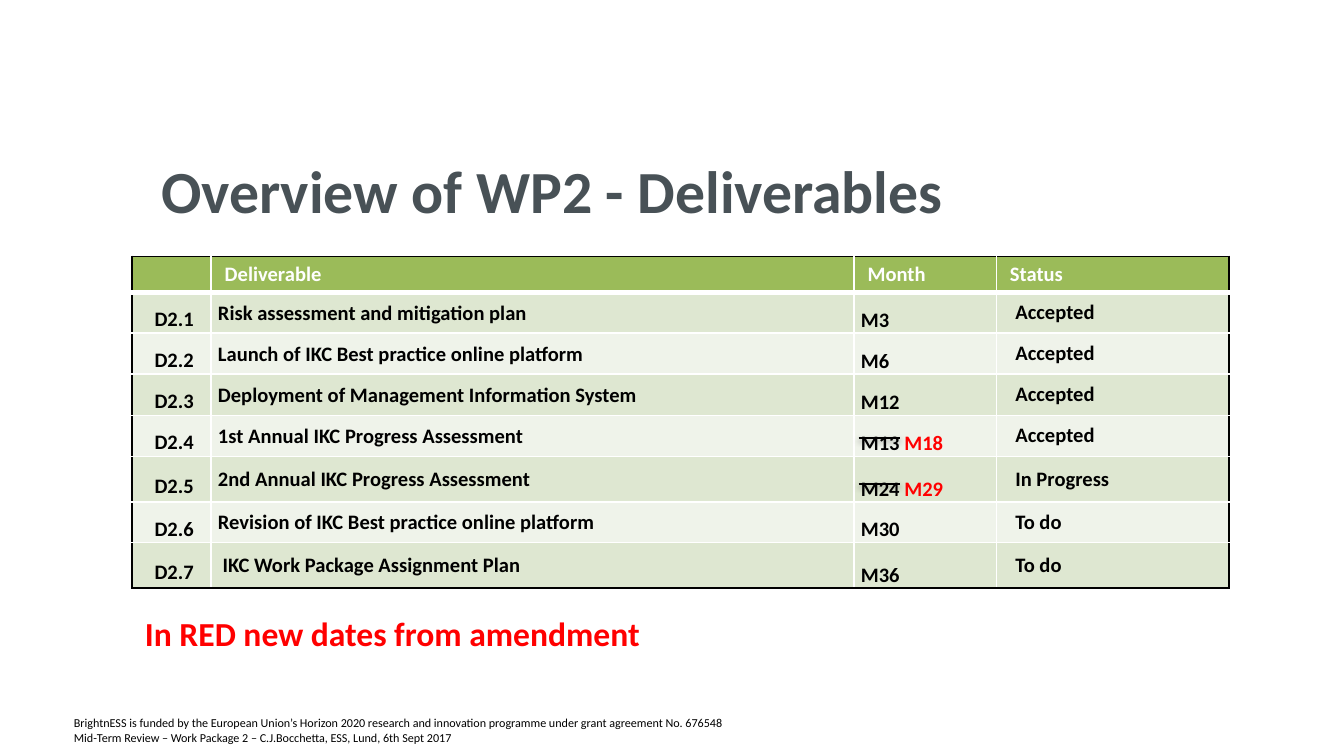
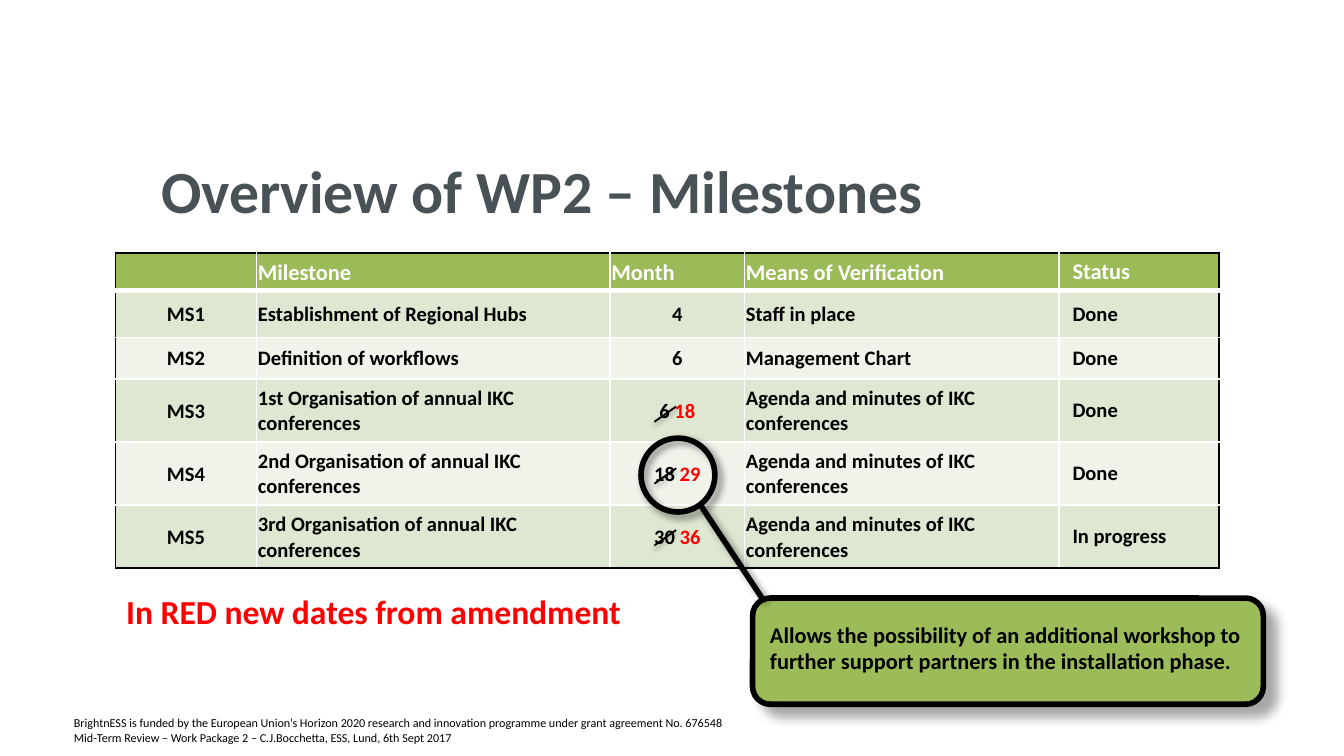
"""Build the WP2 deliverables and milestones overview slides."""
from dataclasses import dataclass
from typing import Any, NamedTuple, Optional, Sequence, Union

from lxml import etree
from pptx import Presentation, util as u
from pptx.dml.color import RGBColor
from pptx.enum import shapes, text
from pptx.oxml import ns

COLORS = {
    "ink": "000000", "white": "FFFFFF", "title": "485156", "new_date": "FF0000",
    "header": "9BBB59", "odd": "DEE7D1", "even": "EFF3EA", "callout": "9CBB59",
}
FONT = "Calibri"
FOOTER = [
    "BrightnESS is funded by the European Union’s Horizon 2020 research and innovation "
    "programme under grant agreement No. 676548",
    "Mid-Term Review – Work Package 2 – C.J.Bocchetta, ESS, Lund, 6th Sept 2017",
]
LEFT, CENTER = text.PP_ALIGN.LEFT, text.PP_ALIGN.CENTER
TOP, MIDDLE, BOTTOM = (text.MSO_ANCHOR.TOP, text.MSO_ANCHOR.MIDDLE, text.MSO_ANCHOR.BOTTOM)
TIGHT = (0.7, 0.7, 0.7, 0)
WIDE = (7.2, 2.8, 7.2, 2.8)
BOX = (7.2, 3.6, 7.2, 3.6)


class Revised(NamedTuple):
    """A date with the one that replaces it."""
    old: str
    new: str


class Shadow(NamedTuple):
    """An outer shadow: opacity in percent, lengths in points, angle in degrees."""
    opacity: float
    blur: float
    distance: float
    angle: float


class Box(NamedTuple):
    """A place on the slide in points."""
    left: float
    top: float
    width: float
    height: float


Line = Union[str, Revised]
STRIKE_SHADOW = Shadow(38, 3.1, 1.6, 90)
RING_SHADOW = Shadow(43, 4, 3, 45)
PANEL_SHADOW = Shadow(35, 6.2, 8, 41)


@dataclass(frozen=True)
class Column:
    """One table column with the format of its body cells."""
    header: str
    width: float
    align: Any = LEFT
    anchor: Any = MIDDLE
    margins: tuple = TIGHT
    header_margins: tuple = TIGHT
    spacing: Optional[float] = None
    indent: float = 0


@dataclass(frozen=True)
class Overview:
    """One slide: its title, table and note."""
    title: str
    left: float
    top: float
    header_size: float
    header_anchor: Any
    columns: Sequence[Column]
    heights: Sequence[float]
    rows: Sequence[Sequence[Line]]
    note: Box


DELIVERABLES = Overview(
    "Overview of WP2 - Deliverables", 70.6, 137.3, 11, TOP,
    [
        Column("", 42.6, align=CENTER, spacing=1.5, indent=2.9),
        Column("Deliverable", 344.4, header_margins=WIDE, indent=2.9),
        Column("Month", 76.3, anchor=BOTTOM, header_margins=WIDE, indent=2.9),
        Column("Status", 124.5, margins=WIDE, header_margins=WIDE, indent=2.9),
    ],
    [19.2, 22, 22, 22, 22, 24.5, 21.6, 24.5],
    [
        ("D2.1", "Risk assessment and mitigation plan", "M3", "Accepted"),
        ("D2.2", "Launch of IKC Best practice online platform", "M6", "Accepted"),
        ("D2.3", "Deployment of Management Information System", "M12", "Accepted"),
        ("D2.4", "1st Annual IKC Progress Assessment", Revised("M13", "M18"), "Accepted"),
        ("D2.5", "2nd Annual IKC Progress Assessment", Revised("M24", "M29"), "In Progress"),
        ("D2.6", "Revision of IKC Best practice online platform", "M30", "To do"),
        ("D2.7", " IKC Work Package Assignment Plan", "M36", "To do"),
    ],
    Box(70.6, 324.7, 283, 29),
)
AGENDA = "Agenda and minutes of IKC conferences"
MILESTONES = Overview(
    "Overview of WP2 – Milestones", 61.9, 135.5, 12, MIDDLE,
    [
        Column("", 75.6, align=CENTER),
        Column("Milestone", 189.4),
        Column("Month", 72, align=CENTER),
        Column("Means of Verification", 168.5),
        Column("Status", 85.7, margins=WIDE, header_margins=WIDE),
    ],
    [20.4, 25, 22.2, 33.8, 33.8, 33.8],
    [
        ("MS1", "Establishment of Regional Hubs", "4", "Staff in place", "Done"),
        ("MS2", "Definition of workflows", "6", "Management Chart", "Done"),
        ("MS3", "1st Organisation of annual IKC conferences", Revised("6", "18"), AGENDA, "Done"),
        ("MS4", "2nd Organisation of annual IKC conferences", Revised("18", "29"), AGENDA, "Done"),
        ("MS5", "3rd Organisation of annual IKC conferences", Revised("30", "36"), AGENDA,
         "In progress"),
    ],
    Box(60.5, 313.2, 283, 29),
)


def rgb(name: str) -> RGBColor:
    """Look up a palette colour."""
    return RGBColor.from_string(COLORS[name])


def child(parent: Any, tag: str, **attributes: Any) -> Any:
    """Append a DrawingML element."""
    return etree.SubElement(parent, ns.qn(f"a:{tag}"),
                            {key: str(value) for key, value in attributes.items()})


def write(frame: Any, lines: Sequence[Line], *, size: float, color: str = "ink",
          bold: bool = True, align: Any = LEFT, spacing: Any = None, indent: float = 0) -> None:
    """Fill a text frame with formatted paragraphs."""
    for index, line in enumerate(lines):
        paragraph = frame.paragraphs[0] if index == 0 else frame.add_paragraph()
        paragraph.alignment = align
        if spacing:
            paragraph.line_spacing = spacing
        if indent:
            properties = paragraph._p.get_or_add_pPr()
            properties.set("marL", str(u.Pt(indent)))
            properties.set("indent", "0")
        if not line:
            child(paragraph._p, "endParaRPr", sz=int(size * 100))
            continue
        parts = ([(line.old + " ", color), (line.new, "new_date")]
                 if isinstance(line, Revised) else [(line, color)])
        for wording, tint in parts:
            run = paragraph.add_run()
            run.text = wording
            run.font.name, run.font.size, run.font.bold = FONT, u.Pt(size), bold
            run.font.color.rgb = rgb(tint)


def add_text(parent: Any, box: Box, lines: Sequence[Line], *, anchor: Any = TOP,
             margins: tuple = BOX, wrap: bool = True, **style: Any) -> None:
    """Place a text box."""
    frame = parent.add_textbox(*map(u.Pt, box)).text_frame
    frame.word_wrap, frame.vertical_anchor = wrap, anchor
    (frame.margin_left, frame.margin_top,
     frame.margin_right, frame.margin_bottom) = map(u.Pt, margins)
    write(frame, lines, **style)


def outline(shape: Any, width: float, shadow: Shadow) -> None:
    """Give a shape or connector its black line and its shadow."""
    shape.line.color.rgb = rgb("ink")
    shape.line.width = u.Pt(width)
    effects = child(shape._element.spPr, "effectLst")
    outer = child(effects, "outerShdw", blurRad=u.Pt(shadow.blur), dist=u.Pt(shadow.distance),
                  dir=int(shadow.angle * 60000), rotWithShape=0)
    tint = child(outer, "srgbClr", val=COLORS["ink"])
    child(tint, "alpha", val=int(shadow.opacity * 1000))


def add_line(parent: Any, ends: Sequence[float], width: float, shadow: Shadow) -> None:
    """Draw a straight line between two points."""
    connector = parent.add_connector(shapes.MSO_CONNECTOR.STRAIGHT, *map(u.Pt, ends))
    outline(connector, width, shadow)


def add_outlined(parent: Any, preset: Any, box: Box, shadow: Shadow,
                 fill: Optional[str] = None) -> None:
    """Draw a preset shape with a heavy outline."""
    shape = parent.add_shape(preset, *map(u.Pt, box))
    if fill:
        shape.fill.solid()
        shape.fill.fore_color.rgb = rgb(fill)
    else:
        shape.fill.background()
    outline(shape, 3, shadow)


def set_border(cell: Any, side: str, color: str, width: float) -> None:
    """Add one border to a cell."""
    edge = child(cell._tc.get_or_add_tcPr(), f"ln{side}", w=u.Pt(width))
    child(child(edge, "solidFill"), "srgbClr", val=COLORS[color])


def add_grid(slide: Any, overview: Overview) -> None:
    """Draw the table with a dark frame and white inner rules."""
    columns, heights = overview.columns, overview.heights
    box = Box(overview.left, overview.top, sum(c.width for c in columns), sum(heights))
    table = slide.shapes.add_table(len(heights), len(columns), *map(u.Pt, box)).table
    table.first_row = table.horz_banding = False
    for index, column in enumerate(columns):
        table.columns[index].width = u.Pt(column.width)
    last_row, last_column = len(heights) - 1, len(columns) - 1
    for row, values in enumerate([[c.header for c in columns], *overview.rows]):
        table.rows[row].height = u.Pt(heights[row])
        is_header = row == 0
        for index, (column, value) in enumerate(zip(columns, values)):
            cell = table.cell(row, index)
            for side, outer in (("L", index == 0), ("R", index == last_column),
                                ("T", is_header), ("B", row == last_row)):
                set_border(cell, side, "ink" if outer else "white",
                           3 if is_header and side == "B" else 1)
            cell.fill.solid()
            cell.fill.fore_color.rgb = rgb(
                "header" if is_header else "odd" if row % 2 else "even")
            cell.vertical_anchor = overview.header_anchor if is_header else column.anchor
            (cell.margin_left, cell.margin_top, cell.margin_right, cell.margin_bottom) = map(
                u.Pt, column.header_margins if is_header else column.margins)
            if is_header:
                write(cell.text_frame, [value], size=overview.header_size, color="white")
            else:
                write(cell.text_frame, [value], size=11, align=column.align,
                      spacing=column.spacing, indent=column.indent)


def add_overview(deck: Any, overview: Overview) -> Any:
    """Add a slide with footer, title, table and note."""
    slide = deck.slides.add_slide(deck.slide_layouts[6])
    add_text(slide.shapes, Box(39.6, 379.4, 410.4, 19.4), FOOTER, margins=(0, 3.6, 7.2, 3.6),
             size=6.5, bold=False, spacing=u.Pt(8))
    add_text(slide.shapes, Box(79.2, 67.7, 611.3, 67.7), [overview.title], anchor=MIDDLE,
             size=32, color="title")
    add_grid(slide, overview)
    return slide


def add_note(slide: Any, overview: Overview) -> None:
    """Explain the red dates below the table."""
    add_text(slide.shapes, overview.note, ["In RED new dates from amendment"], wrap=False,
             size=18, color="new_date")


def add_callout(slide: Any) -> None:
    """Ring the MS4 date and tie it to its explanation."""
    group = slide.shapes.add_group_shape().shapes
    add_outlined(group, shapes.MSO_SHAPE.ROUNDED_RECTANGLE, Box(403.2, 320.4, 273.6, 56.9),
                 PANEL_SHADOW, "callout")
    add_text(group, Box(405.4, 329, 267.8, 36),
             ["Allows the possibility of an additional workshop to further support partners "
              "in the installation phase."], size=12)
    add_outlined(group, shapes.MSO_SHAPE.OVAL, Box(343.4, 234.7, 39.6, 39.6), RING_SHADOW)
    add_line(group, (375.8, 271.4, 408.2, 320.4), 3, RING_SHADOW)


def main() -> None:
    """Build and save the deck."""
    deck = Presentation()
    deck.slide_width, deck.slide_height = u.Pt(720), u.Pt(405)

    deliverables = add_overview(deck, DELIVERABLES)
    for y in (259.2, 234.7):
        add_line(deliverables.shapes, (460, y, 482.4, y), 1, STRIKE_SHADOW)
    add_note(deliverables, DELIVERABLES)

    milestones = add_overview(deck, MILESTONES)
    strikes = milestones.shapes.add_group_shape().shapes
    for step in range(3):
        y = 292.2 - 33.1 * step
        add_line(strikes, (350.6, y, 362.2, y - 8.2), 1, STRIKE_SHADOW)
    add_note(milestones, MILESTONES)
    add_callout(milestones)

    deck.save("out.pptx")


if __name__ == "__main__":
    main()
